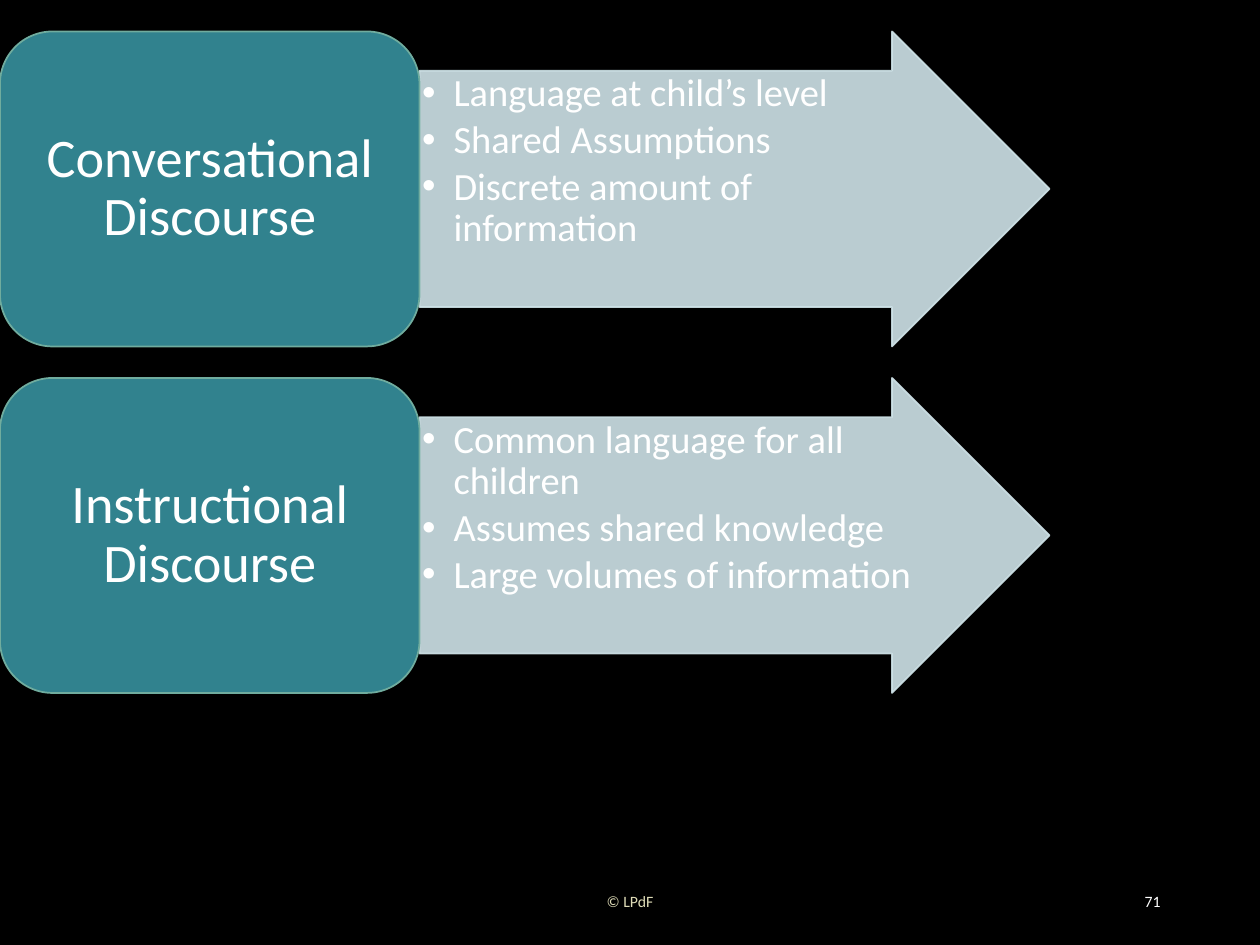
from lxml.etree import SubElement
from pptx import Presentation
from pptx.dml.color import RGBColor
from pptx.enum.shapes import MSO_SHAPE
from pptx.enum.text import MSO_ANCHOR, PP_ALIGN
from pptx.oxml.ns import qn
from pptx.util import Inches, Pt

DISCOURSES = [
    ("Conversational Discourse",
     ["Language at child’s level", "Shared Assumptions", "Discrete amount of information"]),
    ("Instructional Discourse",
     ["Common language for all children", "Assumes shared knowledge", "Large volumes of information"]),
]
BLACK = RGBColor(0x00, 0x00, 0x00)
WHITE = RGBColor(0xFF, 0xFF, 0xFF)
CREAM = RGBColor(0xDF, 0xDC, 0xB7)
PALE = RGBColor(0xCF, 0xE3, 0xE8)
TEAL = RGBColor(0x31, 0x82, 0x8E)
GREEN = RGBColor(0x70, 0xAC, 0x9E)
FOOTERS = [
    ("© LPdF", 3.31, 3.38, PP_ALIGN.CENTER, CREAM),
    ("71", 7.06, 2.25, PP_ALIGN.RIGHT, WHITE),
]
FONT = "Calibri"
TOP, ROW_HEIGHT, ROW_GAP = 0.25, 2.5, 0.25
LABEL_WIDTH, ARROW_WIDTH, POINTS_WIDTH = 3.33, 5, 4.06
ARROW_BODY = 0.75


def add_block(slide, preset, left, top, width, fill, line):
    block = slide.shapes.add_shape(
        preset, Inches(left), Inches(top), Inches(width), Inches(ROW_HEIGHT))
    block.shadow.inherit = False
    block.fill.solid()
    block.fill.fore_color.rgb = fill
    block.line.color.rgb = line
    block.line.width = Pt(1)
    return block


def set_frame(frame, anchor, side, end):
    frame.word_wrap = True
    frame.vertical_anchor = anchor
    frame.margin_left = frame.margin_right = Inches(side)
    frame.margin_top = frame.margin_bottom = Inches(end)


def add_text_frame(slide, left, top, width, height, anchor, side, end):
    box = slide.shapes.add_textbox(Inches(left), Inches(top), Inches(width), Inches(height))
    set_frame(box.text_frame, anchor, side, end)
    return box.text_frame


def write(paragraph, text, size, color, align):
    paragraph.alignment = align
    run = paragraph.add_run()
    run.text = text
    run.font.name = FONT
    run.font.size = Pt(size)
    run.font.color.rgb = color


def set_bullet(paragraph):
    properties = paragraph._p.get_or_add_pPr()
    properties.set("marL", str(Inches(0.25)))
    properties.set("indent", str(-Inches(0.25)))
    SubElement(properties, qn("a:buFont")).set("typeface", "Arial")
    SubElement(properties, qn("a:buChar")).set("char", "•")


def add_points(slide, points, top):
    arrow = add_block(slide, MSO_SHAPE.RIGHT_ARROW, LABEL_WIDTH, top, ARROW_WIDTH, PALE, PALE)
    arrow.adjustments[0], arrow.adjustments[1] = ARROW_BODY, 0.5
    for color in arrow._element.spPr.iter(qn("a:srgbClr")):
        SubElement(color, qn("a:alpha")).set("val", "90000")
    body_height = ROW_HEIGHT * ARROW_BODY
    body_top = top + (ROW_HEIGHT - body_height) / 2
    frame = add_text_frame(
        slide, LABEL_WIDTH, body_top, POINTS_WIDTH, body_height, MSO_ANCHOR.TOP, 0.02, 0.02)
    for index, point in enumerate(points):
        paragraph = frame.add_paragraph() if index else frame.paragraphs[0]
        set_bullet(paragraph)
        paragraph.level = 1
        paragraph.line_spacing = 0.9
        paragraph.space_after = Pt(3)
        write(paragraph, point, 22, WHITE, PP_ALIGN.LEFT)


def add_label(slide, label, top):
    box = add_block(slide, MSO_SHAPE.ROUNDED_RECTANGLE, 0, top, LABEL_WIDTH, TEAL, GREEN)
    set_frame(box.text_frame, MSO_ANCHOR.MIDDLE, 0.13, 0.06)
    paragraph = box.text_frame.paragraphs[0]
    paragraph.line_spacing = 0.9
    write(paragraph, label, 31, WHITE, PP_ALIGN.CENTER)


def main():
    deck = Presentation()
    deck.slide_width, deck.slide_height = Inches(10), Inches(7.5)
    slide = deck.slides.add_slide(deck.slide_layouts[6])
    slide.background.fill.solid()
    slide.background.fill.fore_color.rgb = BLACK

    for text, left, width, align, color in FOOTERS:
        footer = add_text_frame(slide, left, 6.95, width, 0.4, MSO_ANCHOR.MIDDLE, 0.1, 0.05)
        write(footer.paragraphs[0], text, 9, color, align)

    for row, (label, points) in enumerate(DISCOURSES):
        top = TOP + row * (ROW_HEIGHT + ROW_GAP)
        add_points(slide, points, top)
        add_label(slide, label, top)

    deck.save("out.pptx")


if __name__ == "__main__":
    main()
